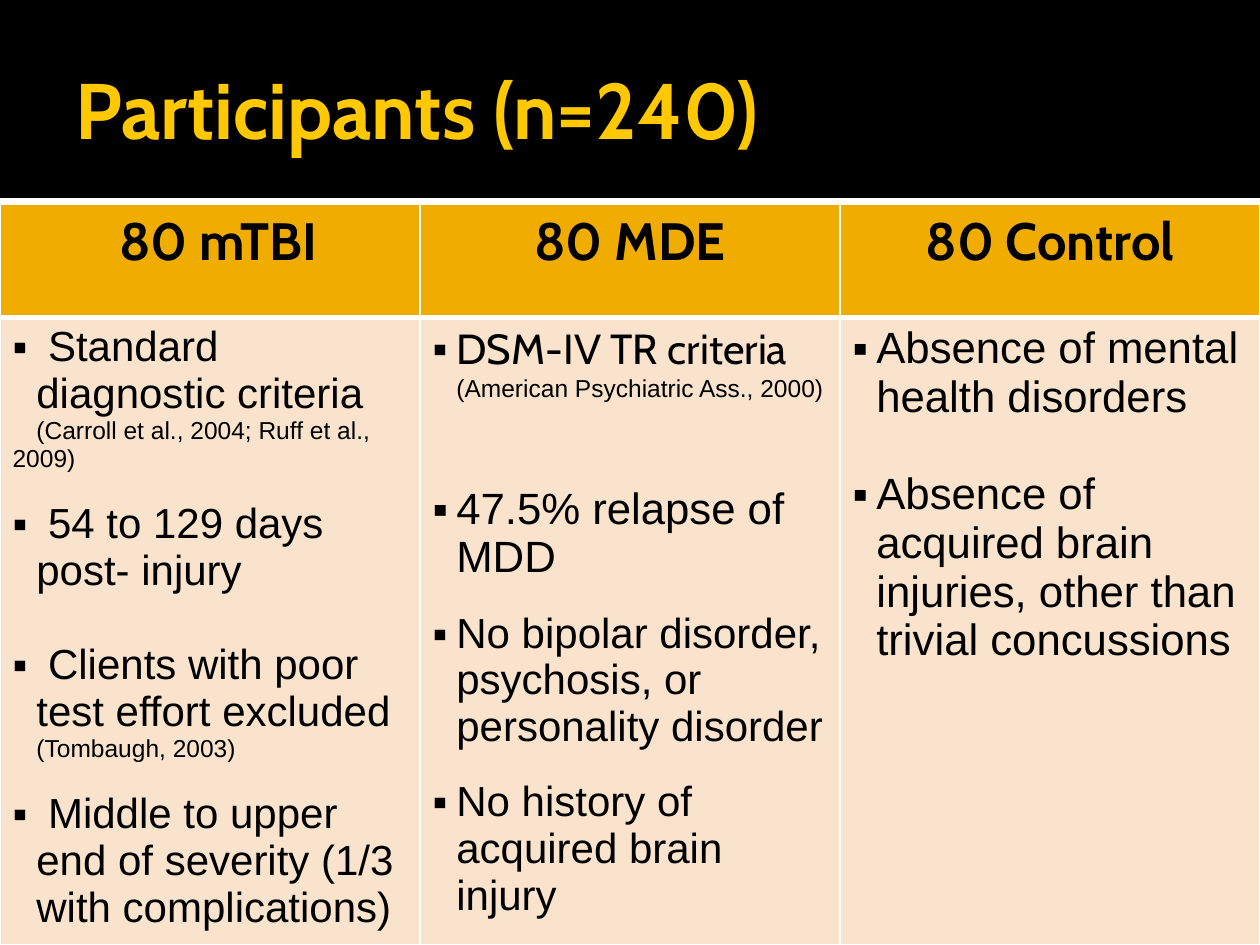
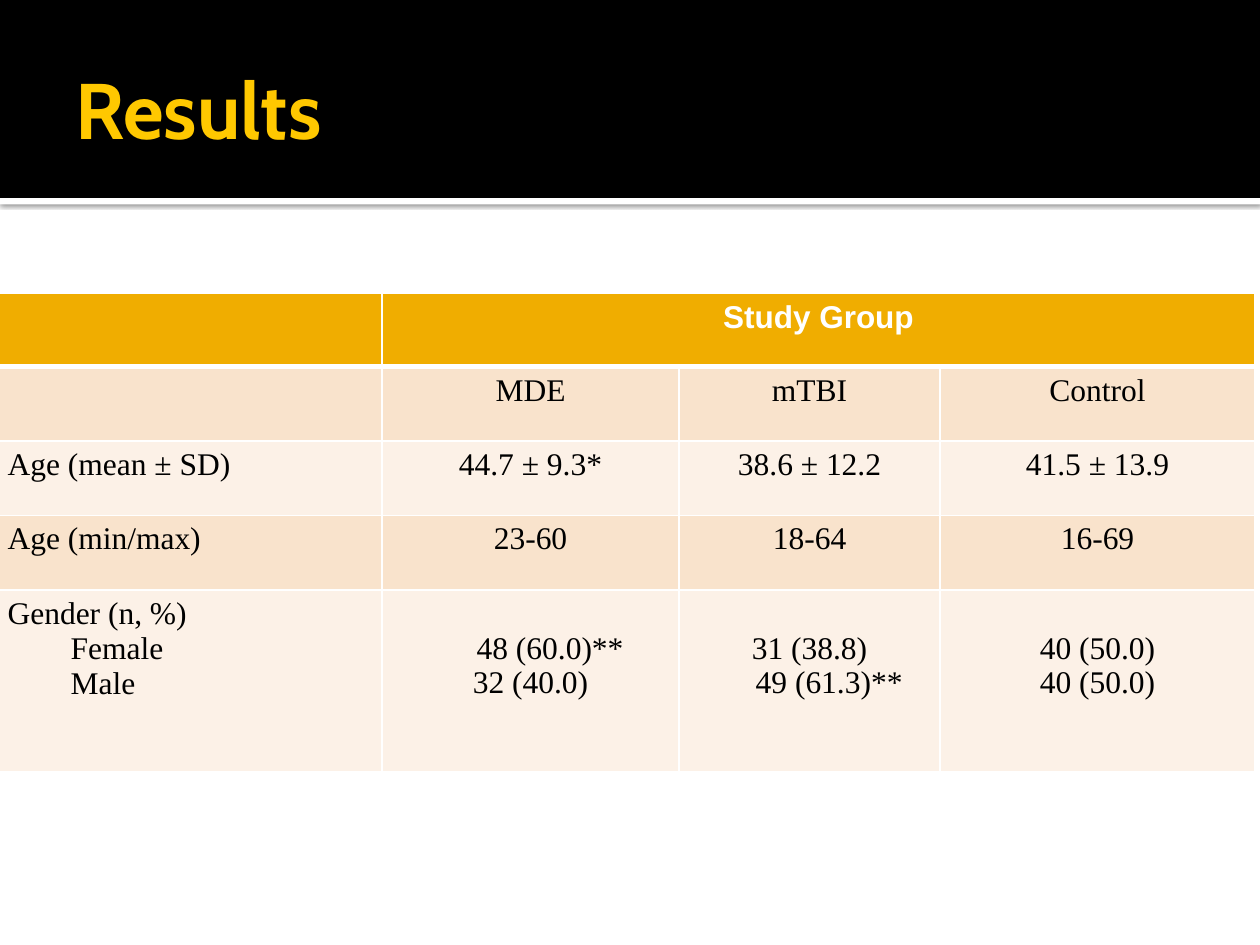
"""Build the participants and results slides of a brain injury study."""
from dataclasses import dataclass, replace
from typing import Any

from lxml.etree import SubElement
from pptx import Presentation
from pptx.dml.color import RGBColor
from pptx.enum.shapes import MSO_SHAPE
from pptx.enum.text import MSO_ANCHOR, MSO_AUTO_SIZE, PP_ALIGN
from pptx.oxml import parse_xml
from pptx.oxml.ns import nsdecls, qn
from pptx.util import Cm, Pt


@dataclass(frozen=True)
class Theme:
    """Colours, fonts and type sizes."""
    black: str = "000000"
    white: str = "FFFFFF"
    gold: str = "FFC800"
    amber: str = "F0AD00"
    peach: str = "F9E3CC"
    cream: str = "FCF1E7"
    head: str = "Cabin"
    sans: str = "Arial"
    serif: str = "Times New Roman"
    title: int = 45
    group: int = 30
    large: int = 25
    body: int = 24
    data: int = 18
    cite: int = 14


THEME = Theme()


@dataclass(frozen=True)
class Para:
    """One paragraph; indents in centimetres, gap above in points."""
    text: str
    size: int = THEME.body
    face: str = THEME.sans
    color: str = THEME.black
    bold: bool = False
    align: Any = PP_ALIGN.LEFT
    left: float = 0
    first: float = 0
    bullet: bool = False
    gap: int = 0


@dataclass(frozen=True)
class Box:
    """One table cell; drop is extra room above the text in centimetres."""
    paras: tuple[Para, ...]
    fill: str
    span: int = 1
    drop: float = 0


@dataclass(frozen=True)
class Grid:
    """A table with its place and sizes in centimetres."""
    left: float
    top: float
    cols: tuple[float, ...]
    rows: tuple[float, ...]
    cells: tuple[tuple[Box, ...], ...]


@dataclass(frozen=True)
class Band:
    """A strip across the slide."""
    top: float
    high: float
    color: str
    shade: bool = False


WIDE, HIGH = 25.4, 19.05
BANDS = (Band(3.99, 0.13, THEME.white, True), Band(0, 3.99, THEME.black))
TITLE = dict(left=Cm(1.27), top=Cm(0.43), width=Cm(22.86), height=Cm(3.48))
FRAME = dict(margin_left=Cm(0.25), margin_top=Cm(0.13), margin_right=Cm(0.13),
             margin_bottom=Cm(0.13), vertical_anchor=MSO_ANCHOR.MIDDLE,
             auto_size=MSO_AUTO_SIZE.NONE, word_wrap=True)


def apply(item: Any, vals: dict[str, Any]) -> None:
    """Set each named value on the item."""
    for name, val in vals.items():
        setattr(item, name, val)


def paint(fill: Any, color: str) -> None:
    """Make a fill solid."""
    fill.solid()
    fill.fore_color.rgb = RGBColor.from_string(color)


def write(frame: Any, paras: tuple[Para, ...]) -> None:
    """Fill a text frame with paragraphs."""
    for num, para in enumerate(paras):
        line = frame.add_paragraph() if num else frame.paragraphs[0]
        apply(line, dict(alignment=para.align, space_before=Pt(para.gap)))
        run = line.add_run()
        run.text = para.text
        apply(run.font, dict(name=para.face, size=Pt(para.size), bold=para.bold))
        paint(run.font.fill, para.color)
        props = line._p.get_or_add_pPr()
        props.set("marL", str(Cm(para.left)))
        props.set("indent", str(Cm(para.first)))
        if para.bullet:
            SubElement(props, qn("a:buFont"), typeface=THEME.sans)
            SubElement(props, qn("a:buChar"), char="▪")
        else:
            SubElement(props, qn("a:buNone"))


def edge(cell: Any, row: int) -> None:
    """Draw white cell borders, heavy beneath the header row."""
    widths = dict(L=1, R=1, T=3 if row == 1 else 1, B=1 if row else 3)
    props = cell._tc.get_or_add_tcPr()
    for num, (side, width) in enumerate(widths.items()):
        props.insert(num, parse_xml(
            f'<a:ln{side} {nsdecls("a")} w="{Pt(width)}"><a:solidFill>'
            f'<a:srgbClr val="{THEME.white}"/></a:solidFill></a:ln{side}>'))


def add_grid(slide: Any, grid: Grid) -> None:
    """Place a table on the slide."""
    table = slide.shapes.add_table(
        len(grid.rows), len(grid.cols), Cm(grid.left), Cm(grid.top),
        Cm(sum(grid.cols)), Cm(sum(grid.rows))).table
    for col, width in zip(table.columns, grid.cols):
        col.width = Cm(width)
    for row, height in zip(table.rows, grid.rows):
        row.height = Cm(height)
    for row, boxes in enumerate(grid.cells):
        col = 0
        for box in boxes:
            cell = table.cell(row, col)
            if box.span > 1:
                cell.merge(table.cell(row, col + box.span - 1))
            for part in range(col, col + box.span):
                paint(table.cell(row, part).fill, box.fill)
                edge(table.cell(row, part), row)
            cell.margin_top = Cm(0.13 + box.drop)
            write(cell.text_frame, box.paras)
            col += box.span


def add_slide(deck: Any, name: str, grid: Grid) -> None:
    """Add a slide with bands, title and table."""
    slide = deck.slides.add_slide(deck.slide_layouts[5])
    title = slide.shapes.title
    for band in BANDS:
        strip = slide.shapes.add_shape(
            MSO_SHAPE.RECTANGLE, 0, Cm(band.top), Cm(WIDE), Cm(band.high))
        paint(strip.fill, band.color)
        strip.line.fill.background()
        strip.shadow.inherit = False
        if band.shade:
            glow = SubElement(
                strip._element.spPr.find(qn("a:effectLst")), qn("a:outerShdw"),
                blurRad=str(Pt(2.5)), dist=str(Pt(0.8)), dir="5400000")
            tint = SubElement(glow, qn("a:srgbClr"), val=THEME.black)
            SubElement(tint, qn("a:alpha"), val="60000")
        title.element.addprevious(strip.element)
    apply(title, TITLE)
    apply(title.text_frame, FRAME)
    write(title.text_frame,
          (Para(name, THEME.title, THEME.head, THEME.gold, True),))
    add_grid(slide, grid)


def point(text: str, gap: int = 0, size: int = THEME.body,
          face: str = THEME.sans) -> Para:
    """Make a bulleted paragraph."""
    return Para(text, size, face, left=0.48, first=-0.48, bullet=True, gap=gap)


def cite(text: str) -> Para:
    """Make a small source line."""
    return Para(text, THEME.cite, left=0.48)


def people() -> Grid:
    """Describe the table of study groups."""
    top = Para("80 mTBI", THEME.group, THEME.head, bold=True,
               align=PP_ALIGN.CENTER, left=0.33)
    heads = (top, replace(top, text="80 MDE", left=0),
             replace(top, text="80 Control", left=0))
    lists = (
        (point(" Standard diagnostic criteria"),
         replace(cite("(Carroll et al., 2004; Ruff et al., 2009)"),
                 left=0, first=0.48),
         point(" 54 to 129 days post- injury", 16),
         point(" Clients with poor test effort excluded", 27),
         cite("(Tombaugh, 2003)"),
         point(" Middle to upper end of severity (1/3 with complications)", 16)),
        (point("DSM-IV TR criteria", face=THEME.head),
         cite("(American Psychiatric Ass., 2000)"),
         point("47.5% relapse of MDD", 47, THEME.large),
         point("No bipolar disorder, psychosis, or personality disorder", 16),
         point("No history of acquired brain injury", 16)),
        (point("Absence of mental health disorders", size=THEME.large),
         point("Absence of acquired brain injuries, other than trivial concussions",
               28, THEME.large)),
    )
    return Grid(0, 4.11, (WIDE / 3,) * 3, (2.29, HIGH - 4.11 - 2.29), (
        tuple(Box((head,), THEME.amber) for head in heads),
        tuple(Box(paras, THEME.peach) for paras in lists)))


def results() -> Grid:
    """Describe the table of ages and genders."""
    base = Para("", THEME.data, THEME.serif)
    mid = replace(base, align=PP_ALIGN.CENTER)
    head = replace(mid, text="Study Group", face=THEME.sans,
                   color=THEME.white, bold=True)
    facts = (
        ("", "MDE", "mTBI", "Control"),
        ("Age (mean ± SD)", "44.7 ± 9.3*", "38.6 ± 12.2", "41.5 ± 13.9"),
        ("Age (min/max)", "23-60", "18-64", "16-69"),
    )
    counts = (("48 (60.0)**", "32 (40.0)"), ("31 (38.8)", "49 (61.3)**"),
              ("40 (50.0)", "40 (50.0)"))
    rows = [(Box((), THEME.amber), Box((head,), THEME.amber, 3))]
    for num, fact in enumerate(facts):
        fill = THEME.cream if num % 2 else THEME.peach
        rows.append(tuple(
            Box((replace(mid if col else base, text=text),) if text else (), fill)
            for col, text in enumerate(fact)))
    label = (replace(base, text="Gender (n, %)"),
             *(replace(base, text=text, left=1.27) for text in ("Female", "Male")))
    rows.append((Box(label, THEME.cream), *(
        Box(tuple(replace(mid, text=text, left=0.79 if "*" in text else 0)
                  for text in pair), THEME.cream, drop=0.7)
        for pair in counts)))
    return Grid(-0.1, 5.92, (7.8, 5.99, 5.26, 6.35),
                (1.47, 1.5, 1.5, 1.5, 3.66), tuple(rows))


def main() -> None:
    """Build and save the deck."""
    deck = Presentation()
    apply(deck, dict(slide_width=Cm(WIDE), slide_height=Cm(HIGH)))
    add_slide(deck, "Participants (n=240)", people())
    add_slide(deck, "Results", results())
    deck.save("out.pptx")


if __name__ == "__main__":
    main()
